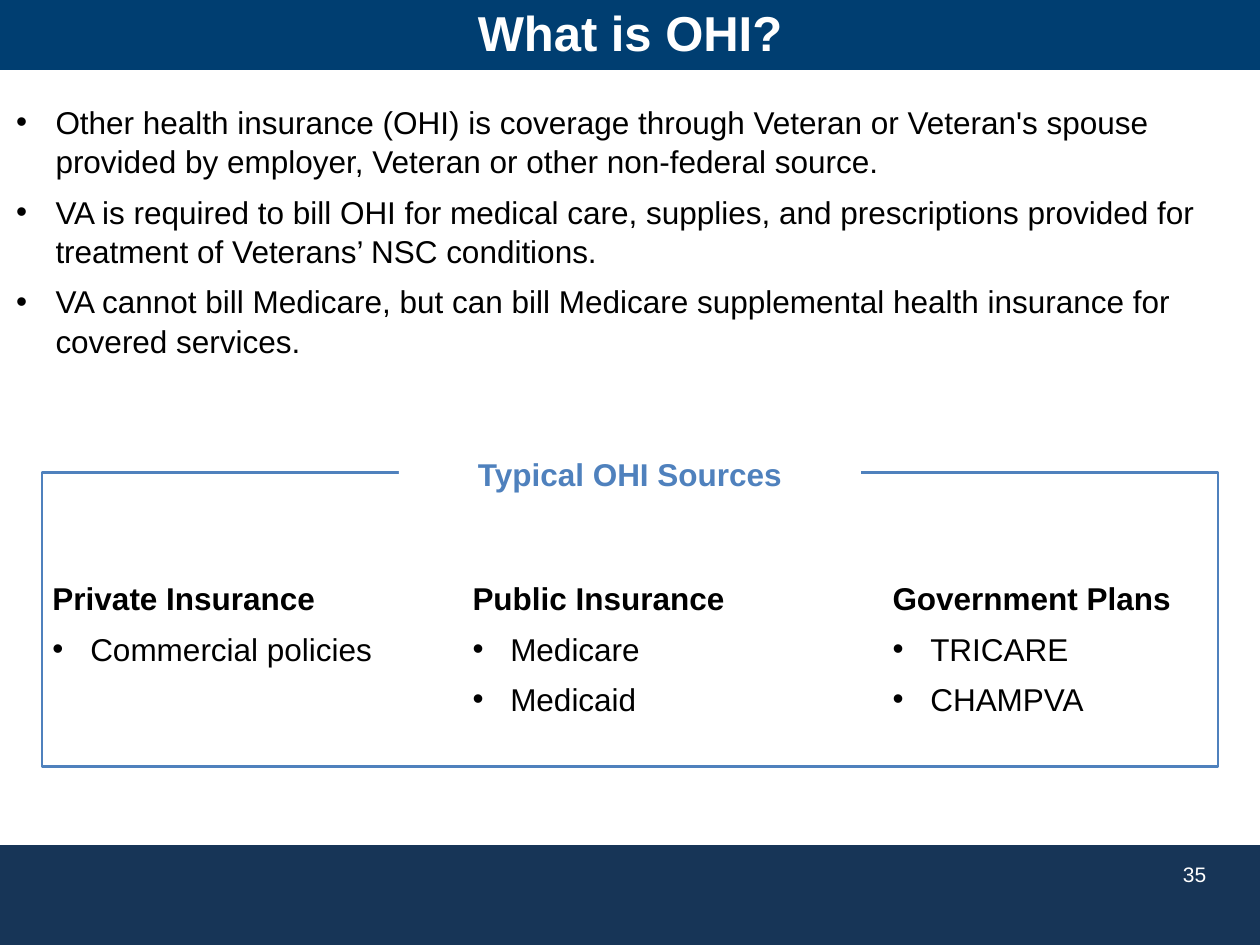
from lxml import etree
from pptx import Presentation
from pptx.dml.color import RGBColor
from pptx.enum.shapes import MSO_SHAPE
from pptx.enum.text import MSO_ANCHOR, MSO_AUTO_SIZE, PP_ALIGN
from pptx.oxml.ns import qn
from pptx.util import Pt

RECTANGLE = MSO_SHAPE.RECTANGLE
TOP, MIDDLE = MSO_ANCHOR.TOP, MSO_ANCHOR.MIDDLE
LEFT, CENTER = PP_ALIGN.LEFT, PP_ALIGN.CENTER
NO_AUTOFIT = MSO_AUTO_SIZE.NONE
COMPARISON_LAYOUT = 4
WIDTH, HEIGHT = 720, 540

COLORS = {
    "header": "003E71",
    "footer": "173557",
    "accent": "4F81BD",
    "white": "FFFFFF",
    "black": "000000",
}

OHI_FACTS = [
    "Other health insurance (OHI) is coverage through Veteran or Veteran's spouse "
    "provided by employer, Veteran or other non-federal source.",
    "VA is required to bill OHI for medical care, supplies, and prescriptions "
    "provided for treatment of Veterans’ NSC conditions.",
    "VA cannot bill Medicare, but can bill Medicare supplemental health insurance "
    "for covered services.",
]

SOURCES = [
    ("Private Insurance", ["Commercial policies"], 210),
    ("Public Insurance", ["Medicare", "Medicaid"], 210),
    ("Government Plans", ["TRICARE", "CHAMPVA"], 180),
]


class SlideBuilder:
    font_name = "Arial"
    text_size = 18
    list_spacing = {"line_spacing": 1.05, "space_before": Pt(0), "space_after": Pt(6)}
    plain_spacing = {"space_before": Pt(0), "space_after": Pt(0)}

    def __init__(self, slide):
        self.slide = slide

    def color(self, name):
        return RGBColor.from_string(COLORS[name])

    def place(self, shape, box):
        for name, value in zip(("left", "top", "width", "height"), box):
            setattr(shape, name, Pt(value))

    def frame(self, shape, inset=(0, 0), anchor=TOP):
        horizontal, vertical = inset
        settings = {
            "word_wrap": True,
            "auto_size": NO_AUTOFIT,
            "vertical_anchor": anchor,
            "margin_left": Pt(horizontal),
            "margin_right": Pt(horizontal),
            "margin_top": Pt(vertical),
            "margin_bottom": Pt(vertical),
        }
        for name, value in settings.items():
            setattr(shape.text_frame, name, value)
        return shape.text_frame

    def fill_paragraph(self, paragraph, text, size=text_size, color="black", bold=False,
                       align=LEFT, indent=0, spacing=plain_spacing):
        properties = paragraph._p.get_or_add_pPr()
        properties.set("marL", str(Pt(indent)))
        properties.set("indent", str(-Pt(indent)))
        if indent:
            etree.SubElement(properties, qn("a:buFont"), typeface=self.font_name)
            etree.SubElement(properties, qn("a:buChar"), char="•")
        else:
            etree.SubElement(properties, qn("a:buNone"))
        for name, value in {"alignment": align, **spacing}.items():
            setattr(paragraph, name, value)
        run = paragraph.add_run()
        run.text = text
        for name, value in {"name": self.font_name, "size": Pt(size), "bold": bold}.items():
            setattr(run.font, name, value)
        run.font.color.rgb = self.color(color)

    def rectangle(self, box, fill=None, line=None):
        shape = self.slide.shapes.add_shape(RECTANGLE, *map(Pt, box))
        shape.shadow.inherit = False
        if fill:
            shape.fill.solid()
            shape.fill.fore_color.rgb = self.color(fill)
        else:
            shape.fill.background()
        if line:
            shape.line.color.rgb = self.color(line)
            shape.line.width = Pt(1.5)
        else:
            shape.line.fill.background()
        return shape

    def band(self, box, fill):
        shape = self.rectangle(box, fill=fill)
        self.slide.shapes.element.insert(2, shape.element)

    def title(self, box, text):
        shape = self.slide.shapes.title
        self.place(shape, box)
        frame = self.frame(shape, anchor=MIDDLE)
        self.fill_paragraph(frame.paragraphs[0], text, size=28, color="white", bold=True,
                            align=CENTER)

    def text_list(self, index, box, items, indent, heading=None, inset=(0, 0)):
        shape = self.slide.placeholders[index]
        self.place(shape, box)
        frame = self.frame(shape, inset)
        entries = [(heading, True, 0)] if heading else []
        entries += [(item, False, indent) for item in items]
        for position, (text, bold, hanging) in enumerate(entries):
            paragraph = frame.add_paragraph() if position else frame.paragraphs[0]
            self.fill_paragraph(paragraph, text, bold=bold, indent=hanging,
                                spacing=self.list_spacing)

    def label(self, box, text):
        shape = self.rectangle(box, fill="white")
        frame = self.frame(shape, (7.2, 3.6), MIDDLE)
        self.fill_paragraph(frame.paragraphs[0], text, color="accent", bold=True, align=CENTER)

    def page_number(self, box, text):
        shape = self.slide.shapes.add_textbox(*map(Pt, box))
        self.fill_paragraph(self.frame(shape).paragraphs[0], text, size=12, color="white")


def main():
    presentation = Presentation()
    presentation.slide_width, presentation.slide_height = Pt(WIDTH), Pt(HEIGHT)
    layout = presentation.slide_layouts[COMPARISON_LAYOUT]
    builder = SlideBuilder(presentation.slides.add_slide(layout))

    builder.band((0, 0, WIDTH, 40), "header")
    builder.band((0, 483, WIDTH, 57), "footer")
    builder.title((18, 1.5, 684, 34), "What is OHI?")
    builder.page_number((676, 492, 39, 29), "35")
    builder.text_list(1, (2, 54, 716, 150), OHI_FACTS, 22.5, inset=(7.2, 3.6))

    builder.rectangle((24, 270, 672, 168), line="accent")
    builder.label((228, 256.5, 264, 29), "Typical OHI Sources")
    for column, (heading, items, width) in enumerate(SOURCES):
        box = (30 + 240 * column, 330, width, 104)
        builder.text_list(column + 2, box, items, 21.6, heading=heading)

    presentation.save("out.pptx")


if __name__ == "__main__":
    main()
